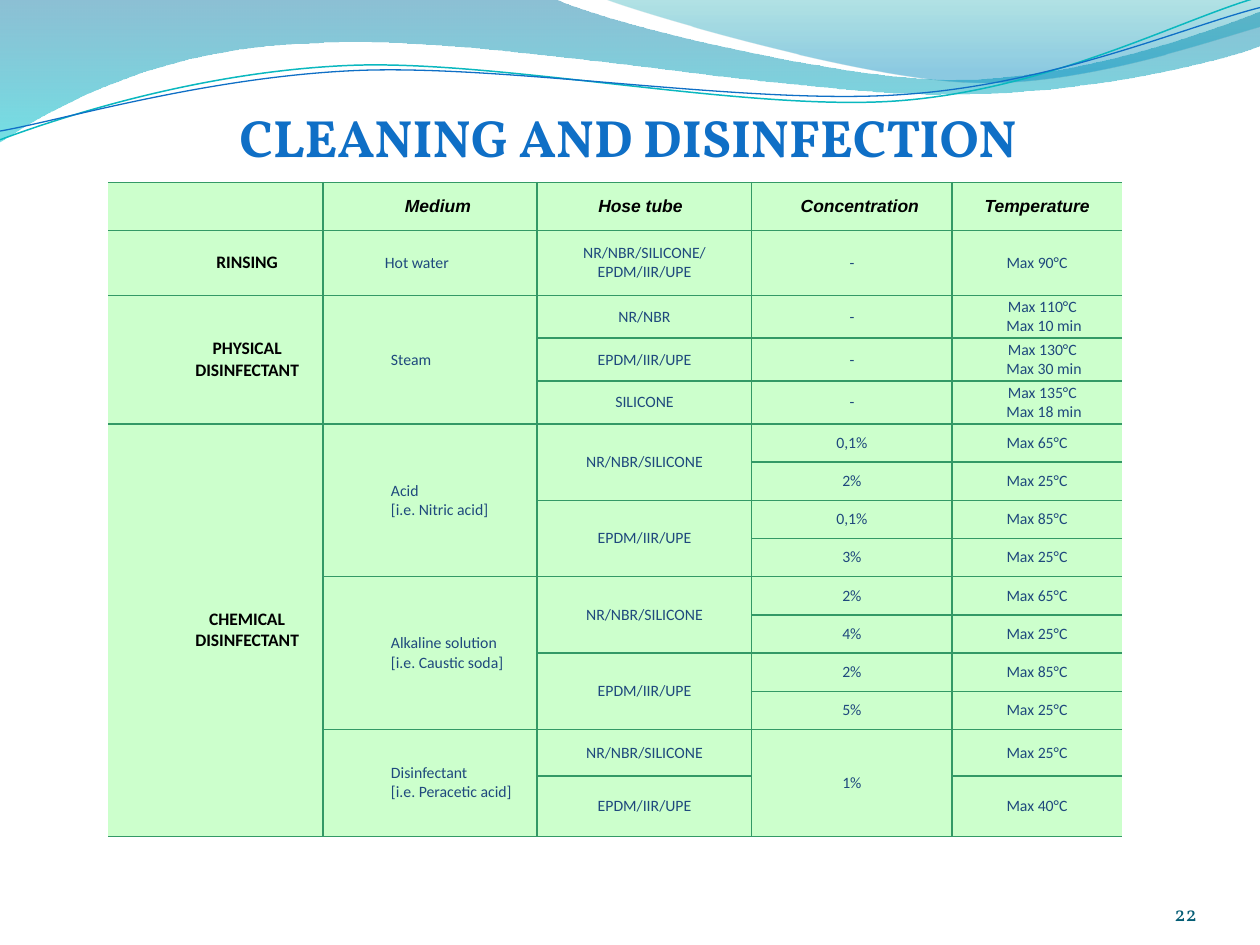
import math

import lxml.etree
import pptx
import pptx.dml.color
import pptx.enum.text
import pptx.oxml.ns
import pptx.util

Pt = pptx.util.Pt
ALIGN = pptx.enum.text.PP_ALIGN
ANCHOR = pptx.enum.text.MSO_ANCHOR
qn = pptx.oxml.ns.qn

COLOURS = {
    "blue": "0F6FC6", "turquoise": "0AB8BF", "number": "045D75",
    "ink": "000000", "navy": "1F497D", "cell": "CCFFCC", "border": "339966",
    "deep": "0074A1", "cyan": "00C6CF", "sea": "00A1A9", "sky": "008BBF",
}

TITLE = {"size": Pt(30), "name": "Vollkorn", "bold": True, "colour": "blue"}
NUMBER = {"size": Pt(12), "name": "Vollkorn", "bold": False, "colour": "number"}
HEADER = {"size": Pt(10), "name": "Arial", "bold": True, "italic": True, "colour": "ink"}
GROUP = {"size": Pt(10), "name": "Calibri", "bold": True, "colour": "ink"}
BODY = {"size": Pt(9), "name": "Calibri", "bold": False, "colour": "navy"}

# Outlines in points: pairs are straight lines, sixes are Bezier curves
WAVES = [
    {"start": (0, 0), "angle": 0, "box": (-0.7, -0.7, 721.4, 82.1),
     "stops": [(0, "deep", 45), (1, "cyan", 55)],
     "segments": [(316.8, -0.7), (342.7, 12.2, 478, 45.4, 545.8, 45.4),
                  (614.2, 45.4, 689.8, 18.7, 720, 6.5), (720.7, 25.9),
                  (707.8, 31.7, 626.4, 54.7, 537.1, 54),
                  (447.8, 54, 275, 20.2, 185, 24.5),
                  (92.9, 25.9, 33.1, 59.8, -0.7, 81.4), (0, 0)]},
    {"start": (344.9, -0.7), "angle": 0, "box": (344.9, -0.7, 375.1, 50.4),
     "stops": [(0, "sea", 30), (0.8, "sky", 45)],
     "segments": [(366.5, 7.9, 491, 44.6, 553.7, 46.8),
                  (616.3, 49.7, 691.9, 23, 720, 15.1), (720, 0), (344.9, -0.7)]},
    {"start": (0, 79.9), "angle": -2.7, "box": (-1.4, 15.8, 721.4, 51.1),
     "line": ("turquoise", 0.85),
     "segments": [(34.6, 67, 113.8, 41, 199.4, 37.4),
                  (284.4, 33.8, 427, 64.1, 513.4, 57.6),
                  (599.8, 51.1, 675.4, 10.8, 718.6, -1.4)]},
    {"start": (0, 74.9), "angle": -2.7, "box": (-1.4, 21.6, 722.2, 41.8),
     "line": ("blue", 0.75),
     "segments": [(33.8, 69.1, 118.1, 43.9, 203.8, 40.3),
                  (290.2, 36.7, 429.8, 60.5, 516.2, 54),
                  (601.9, 48.2, 677.5, 15.1, 720, 4.3)]},
]

COLUMN_WIDTHS = [122.5] * 3 + [114.5, 97]
ROW_HEIGHTS = [27.2, 37.2] + [24.5] * 3 + [21.84] * 8 + [26.6, 34.5]
# Heading with its left and right indents
HEADINGS = [None, ("Medium", 9, 0), ("Hose tube", 9, 13.7),
            ("Concentration", 9, 0), ("Temperature", 0, 0)]

# Each column as (rows spanned, text, paragraph indents)
RUBBERS = [(2, "NR/NBR/SILICONE", [0]), (2, "EPDM/IIR/UPE", [0])]
COLUMNS = [
    [(1, "RINSING", [36]), (3, "PHYSICAL DISINFECTANT", [36]),
     (10, "CHEMICAL DISINFECTANT", [36])],
    [(1, "Hot water", [32.5]), (3, "Steam", [36]),
     (4, "Acid\n[i.e. Nitric acid]", [36, 36]),
     (4, "Alkaline solution\n[i.e. Caustic soda]", [36, 36]),
     (2, "Disinfectant\n[i.e. Peracetic acid]", [36, 36])],
    [(1, "NR/NBR/SILICONE/ EPDM/IIR/UPE", [0])]
    + [(1, name, [0]) for name in ("NR/NBR", "EPDM/IIR/UPE", "SILICONE")]
    + RUBBERS * 2 + [(1, name, [0]) for _, name, _ in RUBBERS],
    [(1, value, [0]) for value in
     ["-"] * 4 + ["0,1%", "2%", "0,1%", "3%", "2%", "4%", "2%", "5%"]]
    + [(2, "1%", [0])],
    [(1, "Max 90°C", [0])]
    + [(1, f"Max {heat}°C\nMax {time} min", [6, 8])
       for heat, time in ((110, 10), (130, 30), (135, 18))]
    + [(1, f"Max {heat}°C", [0]) for heat in (65, 25, 85, 25) * 2 + (25, 40)],
]


def rgb(name):
    return pptx.dml.color.RGBColor.from_string(COLOURS[name])


def write(para, text, style):
    span = para.add_run()
    span.text = text
    for key, value in style.items():
        if key == "colour":
            span.font.color.rgb = rgb(value)
        else:
            setattr(span.font, key, value)


def set_box(shape, box):
    for key, value in zip(("left", "top", "width", "height"), box):
        setattr(shape, key, Pt(value))


def local_point(x, y, box, degrees):
    """Place a point inside the box, undoing the rotation of the shape."""
    angle = math.radians(-degrees)
    dx, dy = x - box[0] - box[2] / 2, y - box[1] - box[3] / 2
    return (Pt(box[2] / 2 + dx * math.cos(angle) - dy * math.sin(angle)),
            Pt(box[3] / 2 + dx * math.sin(angle) + dy * math.cos(angle)))


def add_outline(page, wave):
    """Freeform through the end points, whose sections then become curves."""
    box, angle = wave["box"], wave["angle"]
    builder = page.shapes.build_freeform(
        *local_point(*wave["start"], box, angle), scale=1.0)
    builder.add_line_segments([local_point(*segment[-2:], box, angle)
                               for segment in wave["segments"]], close="stops" in wave)
    shape = builder.convert_to_shape()
    set_box(shape, box)
    shape.rotation = angle
    outline = next(shape._element.iter(qn("a:path")))
    outline.set("w", str(Pt(box[2])))
    outline.set("h", str(Pt(box[3])))
    for section, segment in zip(list(outline), [wave["start"]] + wave["segments"]):
        if len(segment) == 6:
            section.tag = qn("a:cubicBezTo")
        for point in list(section):
            section.remove(point)
        for x, y in zip(segment[::2], segment[1::2]):
            x, y = local_point(x, y, box, angle)
            lxml.etree.SubElement(section, qn("a:pt"), x=str(x), y=str(y))
    return shape


def curve_sections(outline, wave):
    return zip(list(outline), [wave["start"]] + wave["segments"])


def draw_waves(page, waves):
    for wave in waves:
        shape = add_outline(page, wave)
        shape.shadow.inherit = False
        if "line" in wave:
            colour, width = wave["line"]
            shape.fill.background()
            shape.line.color.rgb = rgb(colour)
            shape.line.width = Pt(width)
            continue
        shape.line.fill.background()
        shape.fill.gradient()
        shape.fill.gradient_angle = 270
        for stop, (position, colour, _) in zip(shape.fill.gradient_stops, wave["stops"]):
            stop.position = position
            stop.color.rgb = rgb(colour)
        for tint, (_, _, opacity) in zip(shape._element.spPr.iter(qn("a:srgbClr")),
                                         wave["stops"]):
            lxml.etree.SubElement(tint, qn("a:alpha"), val=str(opacity * 1000))


def place_title(page, box):
    title = page.shapes.title
    set_box(title, box)
    frame = title.text_frame
    frame.word_wrap = False
    frame.auto_size = pptx.enum.text.MSO_AUTO_SIZE.NONE
    frame.vertical_anchor = ANCHOR.TOP
    frame.paragraphs[0].alignment = ALIGN.LEFT
    write(frame.paragraphs[0], "CLEANING AND DISINFECTION", TITLE)
    page.shapes._spTree.append(title._element)  # in front of the waves


def format_cell(cell, open_side):
    cell.margin_left = cell.margin_right = Pt(3)
    cell.margin_top = cell.margin_bottom = 0
    cell.vertical_anchor = ANCHOR.MIDDLE
    properties = cell._tc.get_or_add_tcPr()
    for side in "LRTB":
        line = lxml.etree.SubElement(properties, qn(f"a:ln{side}"), w=str(Pt(1)))
        if side == open_side:
            lxml.etree.SubElement(line, qn("a:noFill"))
        else:
            fill = lxml.etree.SubElement(line, qn("a:solidFill"))
            lxml.etree.SubElement(fill, qn("a:srgbClr"), val=COLOURS["border"])
    cell.fill.solid()
    cell.fill.fore_color.rgb = rgb("cell")


def fill_cell(cell, text, indents, style, alignment, right=0):
    frame = cell.text_frame
    for index, (line, indent) in enumerate(zip(text.split("\n"), indents)):
        para = frame.add_paragraph() if index else frame.paragraphs[0]
        para.alignment = alignment
        for key, value in (("marL", indent), ("marR", right)):
            if value:
                para._p.get_or_add_pPr().set(key, str(Pt(value)))
        write(para, line, style)


def place_table(page, box):
    table = page.shapes.add_table(len(ROW_HEIGHTS), len(COLUMN_WIDTHS),
                                  *map(Pt, box)).table
    table.first_row = table.horz_banding = False
    for column, width in zip(table.columns, COLUMN_WIDTHS):
        column.width = Pt(width * box[2] / sum(COLUMN_WIDTHS))
    for row, height in zip(table.rows, ROW_HEIGHTS):
        row.height = Pt(height * box[3] / sum(ROW_HEIGHTS))
        for number, cell in enumerate(row.cells):
            format_cell(cell, {0: "L", 4: "R"}.get(number))
    for number, (heading, entries) in enumerate(zip(HEADINGS, COLUMNS)):
        if heading:
            text, left, right = heading
            fill_cell(table.cell(0, number), text, [left], HEADER, ALIGN.CENTER, right)
        top = 1
        for span, text, indents in entries:
            cell = table.cell(top, number)
            if span > 1:
                cell.merge(table.cell(top + span - 1, number))
            fill_cell(cell, text, indents, BODY if number else GROUP,
                      ALIGN.LEFT if number == 1 else ALIGN.CENTER)
            top += span


def place_number(page, box):
    frame = page.shapes.add_textbox(*map(Pt, box)).text_frame
    for side in ("left", "right", "top", "bottom"):
        setattr(frame, f"margin_{side}", 0)
    frame.word_wrap = True
    frame.vertical_anchor = ANCHOR.BOTTOM
    frame.paragraphs[0].alignment = ALIGN.RIGHT
    write(frame.paragraphs[0], "22", NUMBER)


def main():
    deck = pptx.Presentation()
    deck.slide_width, deck.slide_height = Pt(720), Pt(540)
    page = deck.slides.add_slide(deck.slide_layouts[5])
    draw_waves(page, WAVES)
    place_title(page, (129.6, 56.2, 478, 44))
    place_table(page, (61.9, 104.4, 579.2, 373.7))
    place_number(page, (624.2, 500.4, 59.8, 28.8))
    deck.save("out.pptx")


if __name__ == "__main__":
    main()
